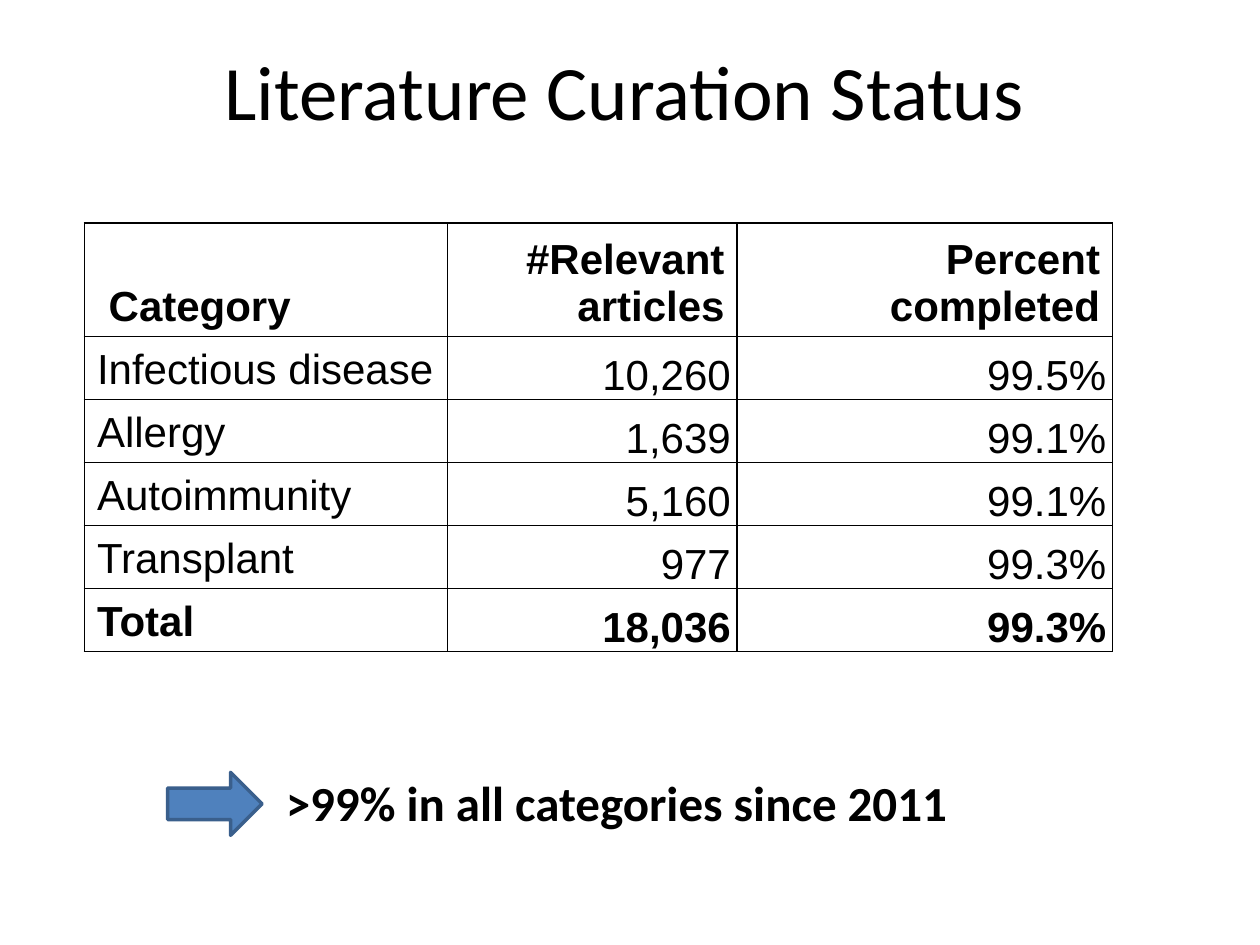
from lxml import etree
from pptx import Presentation
from pptx.dml.color import RGBColor
from pptx.enum.shapes import MSO_SHAPE
from pptx.enum.text import MSO_ANCHOR, PP_ALIGN
from pptx.oxml.ns import qn
from pptx.util import Inches, Pt

RIGHT_ARROW = MSO_SHAPE.RIGHT_ARROW
MIDDLE, BOTTOM = MSO_ANCHOR.MIDDLE, MSO_ANCHOR.BOTTOM
LEFT, CENTER, RIGHT = PP_ALIGN.LEFT, PP_ALIGN.CENTER, PP_ALIGN.RIGHT

COLORS = {"text": "000000", "border": "000000", "arrow": "4F81BD", "arrow_line": "3A5F8C"}


def add_run(paragraph, text, size, font, bold=False):
    run = paragraph.add_run()
    run.text = text
    run.font.size = Pt(size)
    run.font.name = font
    run.font.bold = bold
    run.font.color.rgb = RGBColor.from_string(COLORS["text"])


def add_borders(cell):
    properties = cell._tc.get_or_add_tcPr()
    for side in ("a:lnL", "a:lnR", "a:lnT", "a:lnB"):
        line = etree.SubElement(properties, qn(side), w=str(Pt(1)))
        fill = etree.SubElement(line, qn("a:solidFill"))
        etree.SubElement(fill, qn("a:srgbClr"), val=COLORS["border"])


presentation = Presentation()
presentation.slide_width = Inches(10)
presentation.slide_height = Inches(7.5)
slide = presentation.slides.add_slide(presentation.slide_layouts[5])

title = slide.shapes.title
title.left, title.top = Inches(0.33), Inches(0.17)
title.width, title.height = Inches(9.25), Inches(1.08)
title.text_frame.vertical_anchor = MIDDLE
paragraph = title.text_frame.paragraphs[0]
paragraph.alignment = CENTER
add_run(paragraph, "Literature Curation Status", 44, "Calibri")

rows = [
    (" Category", "#Relevant articles", "Percent completed"),
    ("Infectious disease", "10,260", "99.5%"),
    ("Allergy", "1,639", "99.1%"),
    ("Autoimmunity", "5,160", "99.1%"),
    ("Transplant", "977", "99.3%"),
    ("Total", "18,036", "99.3%"),
]
column_widths = (2.88, 2.3, 2.98)
last_row = len(rows) - 1

table = slide.shapes.add_table(
    len(rows), len(column_widths), Inches(0.67), Inches(1.77), Inches(8.17), Inches(3.4)
).table
table.first_row = False
table.horz_banding = False
for column, width in zip(table.columns, column_widths):
    column.width = Inches(width)

for row_index, values in enumerate(rows):
    table.rows[row_index].height = Inches(0.9 if row_index == 0 else 0.5)
    for column_index, value in enumerate(values):
        cell = table.cell(row_index, column_index)
        cell.vertical_anchor = BOTTOM
        if row_index > 0 and column_index > 0:
            cell.margin_left = cell.margin_top = Inches(0.01)
            cell.margin_right = Inches(0.05)
            cell.margin_bottom = Inches(0)
        add_borders(cell)
        cell.fill.background()
        paragraph = cell.text_frame.paragraphs[0]
        paragraph.alignment = RIGHT if column_index > 0 else LEFT
        add_run(paragraph, value, 24, "Arial", row_index in (0, last_row))

arrow = slide.shapes.add_shape(RIGHT_ARROW, Inches(1.33), Inches(6.13), Inches(0.75), Inches(0.5))
arrow.shadow.inherit = False
arrow.fill.solid()
arrow.fill.fore_color.rgb = RGBColor.from_string(COLORS["arrow"])
arrow.line.color.rgb = RGBColor.from_string(COLORS["arrow_line"])
arrow.line.width = Pt(2)

summary = slide.shapes.add_textbox(Inches(2.17), Inches(6.08), Inches(6.75), Inches(0.57))
summary.text_frame.word_wrap = True
add_run(summary.text_frame.paragraphs[0], ">99% in all categories since 2011", 28, "Calibri", True)

presentation.save("out.pptx")
